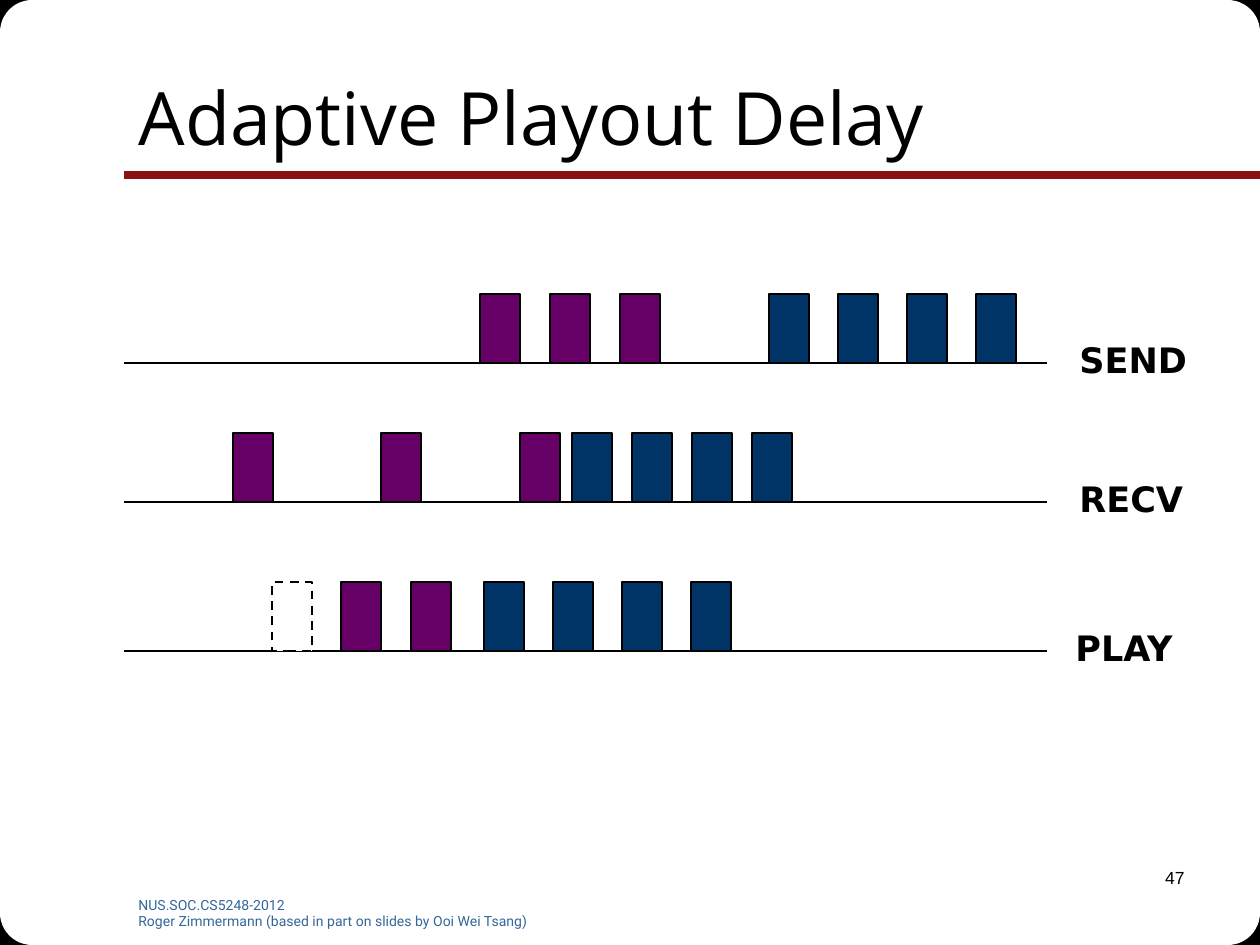
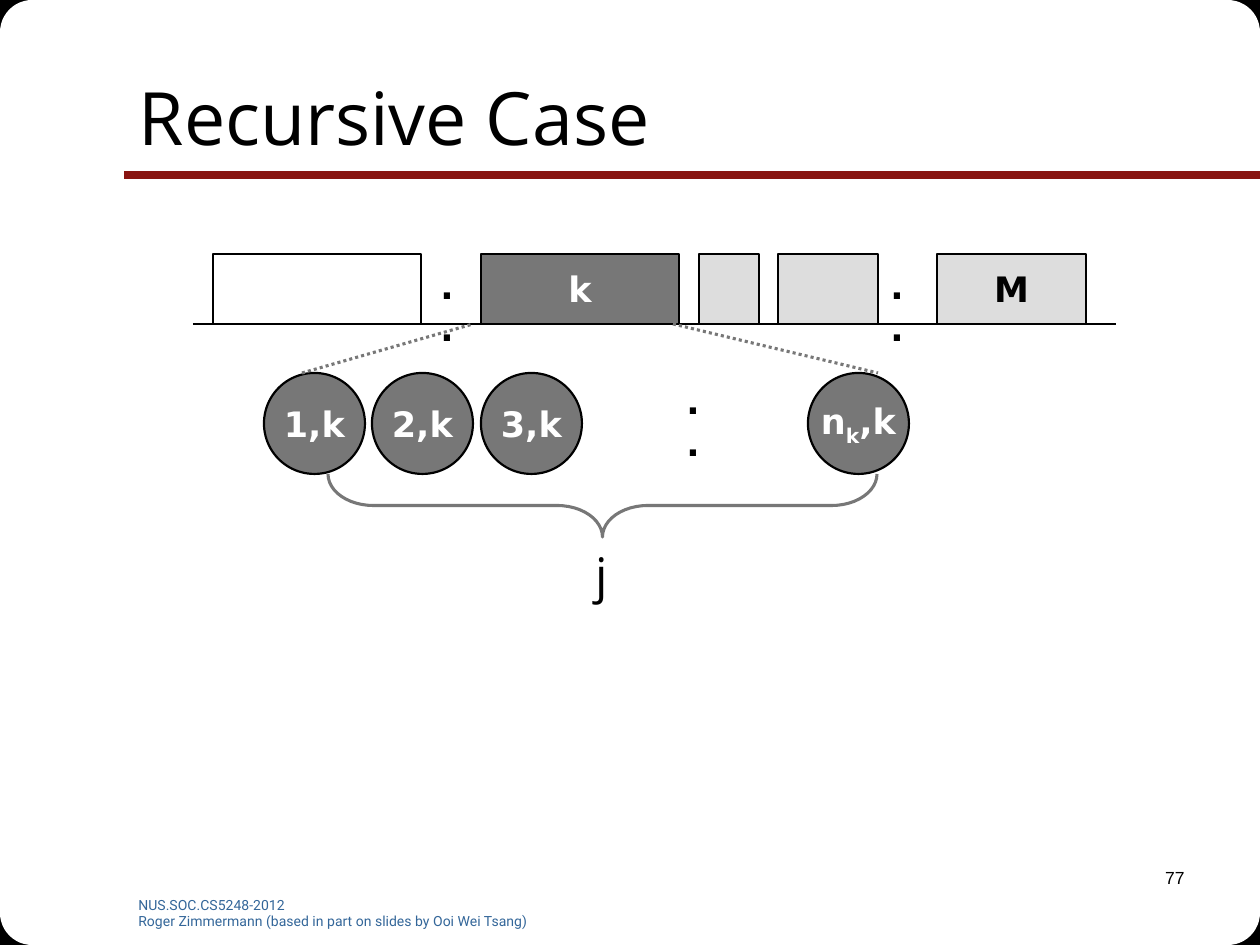
from dataclasses import dataclass
from typing import Iterable

from lxml.etree import SubElement
from pptx import Presentation
from pptx.dml.color import RGBColor
from pptx.enum.dml import MSO_LINE
from pptx.enum.shapes import MSO_CONNECTOR, MSO_SHAPE
from pptx.enum.text import MSO_ANCHOR, MSO_AUTO_SIZE, PP_ALIGN
from pptx.oxml.ns import qn
from pptx.util import Pt

SCALE = 914400 / 126  # EMU in one px
WIDE, HIGH = 1260, 945

BLACK, WHITE, RED, STEEL = "000000", "FFFFFF", "891411", "336699"
PLUM, NAVY, GRAY, PALE = "660066", "003366", "777777", "DDDDDD"
HEAD, LABEL, NOTE, PLAIN = "Open Sans", "DejaVu Sans", "Roboto", "Arial"
FOOTER = "NUS.SOC.CS5248-2012\nRoger Zimmermann (based in part on slides by Ooi Wei Tsang)"


@dataclass
class Run:
    """Blocks of one colour at the given left edges."""
    color: str
    lefts: Iterable[int]
    dash: MSO_LINE | None = None


@dataclass
class Track:
    name: str
    base: int
    left: int
    width: int
    runs: list[Run]


@dataclass
class Box:
    left: int
    width: int
    fill: str
    text: str = ""
    color: str = WHITE


# Shared helpers
def px(*values: float) -> list[int]:
    return [round(value * SCALE) for value in values]


def rgb(color: str) -> RGBColor:
    return RGBColor.from_string(color)


def write(frame, text: str, *, font=LABEL, size=20, color=BLACK, bold=False,
          align=PP_ALIGN.LEFT, anchor=MSO_ANCHOR.TOP, wrap=True) -> None:
    """Fill a text frame; text between underscores is set as subscript."""
    frame.auto_size = MSO_AUTO_SIZE.NONE
    frame.word_wrap, frame.vertical_anchor = wrap, anchor
    for row, line in enumerate(text.split("\n")):
        para = frame.add_paragraph() if row else frame.paragraphs[0]
        para.alignment = align
        for spot, piece in enumerate(line.split("_")):
            run = para.add_run()
            run.text = piece
            run.font.name, run.font.size = font, Pt(size)
            run.font.bold, run.font.color.rgb = bold, rgb(color)
            if spot % 2:
                run._r.get_or_add_rPr().set("baseline", "-25000")


def label(slide, area: tuple, text: str, **style) -> None:
    write(slide.shapes.add_textbox(*px(*area)).text_frame, text, **style)


def shape(slide, kind, area: tuple, *, fill: str | None = None,
          line: str | None = BLACK, width=1.25, dash=None):
    item = slide.shapes.add_shape(kind, *px(*area))
    item.shadow.inherit = False
    if fill:
        item.fill.solid()
        item.fill.fore_color.rgb = rgb(fill)
    else:
        item.fill.background()
    if line:
        item.line.color.rgb, item.line.width = rgb(line), Pt(width)
        if dash:
            item.line.dash_style = dash
    else:
        item.line.fill.background()
    return item


def rule(slide, ends: tuple, color=BLACK, width=1.25, dash=None) -> None:
    item = slide.shapes.add_connector(MSO_CONNECTOR.STRAIGHT, *px(*ends))
    item.line.color.rgb, item.line.width = rgb(color), Pt(width)
    if dash:
        item.line.dash_style = dash
    SubElement(item.element.spPr, qn("a:effectLst"))


def corners(slide, kind, wide: int, high: int, **style) -> None:
    for top in (0, HIGH - high):
        for left in (0, WIDE - wide):
            shape(slide, kind, (left, top, wide, high), **style)


def start(deck, title: str, number: int):
    """Add a slide with rounded corners, title, red rule and footer."""
    slide = deck.slides.add_slide(deck.slide_layouts[5])
    corners(slide, MSO_SHAPE.RECTANGLE, 54, 55, fill=BLACK, width=0.75)
    corners(slide, MSO_SHAPE.ROUNDED_RECTANGLE, 193, 193, fill=WHITE, line=None)
    rule(slide, (WIDE, 175, 124, 175), RED, 4.5)
    label(slide, (126, 890, 431, 35), FOOTER, font=NOTE, size=8, color=STEEL)
    label(slide, (935, 861, 262, 63), str(number), font=PLAIN, size=10,
          align=PP_ALIGN.RIGHT)
    head = slide.shapes.title
    head.left, head.top, head.width, head.height = px(126, 38, 1071, 157)
    write(head.text_frame, title, font=HEAD, size=42, anchor=MSO_ANCHOR.MIDDLE)
    slide.shapes.element.append(head.element)  # bring in front of the corners
    return slide


# Slide: packets on three time lines
TRACKS = [
    Track("SEND", 363, 1067, 132,
          [Run(PLUM, range(480, 621, 70)), Run(NAVY, range(769, 977, 69))]),
    Track("RECV", 502, 1067, 129,
          [Run(PLUM, (233, 381, 520)), Run(NAVY, range(572, 753, 60))]),
    Track("PLAY", 651, 1063, 126,
          [Run(WHITE, (272,), MSO_LINE.DASH), Run(PLUM, (341, 411)),
           Run(NAVY, range(484, 692, 69))]),
]


def playout(deck) -> None:
    slide = start(deck, "Adaptive Playout Delay", 47)
    for track in TRACKS:
        rule(slide, (124, track.base, 1047, track.base))
        label(slide, (track.left, track.base - 31, track.width, 55), track.name,
              bold=True, wrap=False)
        for run in track.runs:
            for left in run.lefts:
                shape(slide, MSO_SHAPE.RECTANGLE, (left, track.base - 69, 40, 69),
                      fill=run.color, dash=run.dash)


# Slide: one block split into its parts
BLOCKS = [
    Box(213, 208, WHITE),
    Box(481, 198, GRAY, "k"),
    Box(699, 60, PALE),
    Box(778, 100, PALE),
    Box(937, 149, PALE, "M", BLACK),
]
PARTS = [Box(left, 101, GRAY, text) for left, text in
         ((264, "1,k"), (372, "2,k"), (481, "3,k"), (808, "n_k_,k"))]
DOTS = [(428, 258), (878, 258), (674, 373)]


def boxes(slide, kind, items: list[Box], top: int, high: int) -> None:
    for item in items:
        body = shape(slide, kind, (item.left, top, item.width, high), fill=item.fill)
        if item.text:
            write(body.text_frame, item.text, color=item.color, bold=True,
                  align=PP_ALIGN.CENTER, anchor=MSO_ANCHOR.MIDDLE, wrap=False)


def recurse(deck) -> None:
    slide = start(deck, "Recursive Case", 77)
    rule(slide, (193, 324, 1116, 324))
    boxes(slide, MSO_SHAPE.RECTANGLE, BLOCKS, 254, 70)
    boxes(slide, MSO_SHAPE.OVAL, PARTS, 373, 101)
    for left, top in DOTS:
        label(slide, (left, top, 50, 55), "..", bold=True)
    # Zoom lines from block k to its parts
    for ends in ((302, 373, 473, 324), (673, 324, 878, 373)):
        rule(slide, ends, GRAY, 1.75, MSO_LINE.ROUND_DOT)
    # Brace under the parts
    label(slide, (582, 538, 40, 72), "j", font=HEAD, size=28,
          align=PP_ALIGN.CENTER, wrap=False)
    brace = shape(slide, MSO_SHAPE.LEFT_BRACE, (571, 231, 63, 549),
                  line=GRAY, width=1.75)
    brace.rotation = 270
    brace.adjustments[0] = 0.72


def main() -> None:
    deck = Presentation()
    deck.slide_width, deck.slide_height = px(WIDE, HIGH)
    playout(deck)
    recurse(deck)
    deck.save("out.pptx")


if __name__ == "__main__":
    main()
